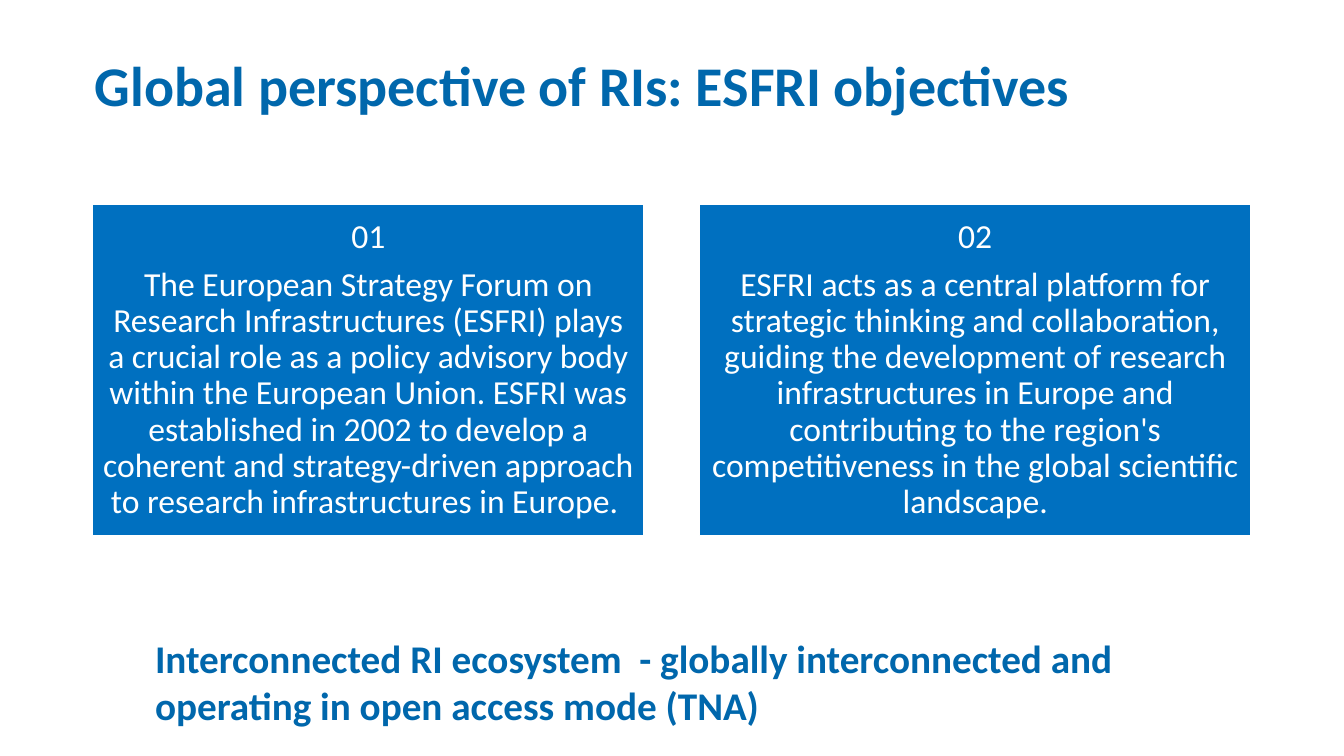
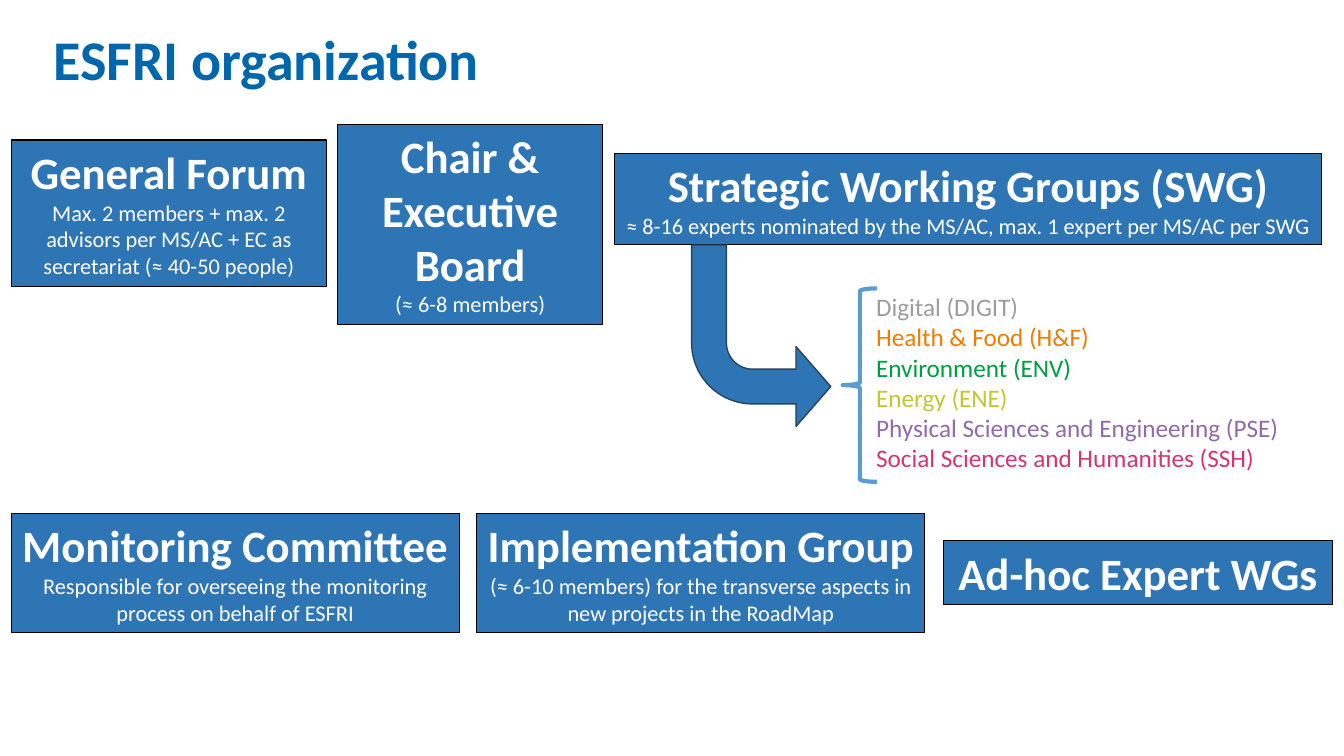
from lxml import etree
from pptx import Presentation
from pptx.dml.color import RGBColor
from pptx.enum.shapes import MSO_SHAPE
from pptx.enum.text import MSO_ANCHOR, MSO_AUTO_SIZE, PP_ALIGN
from pptx.oxml.ns import qn
from pptx.util import Pt

RECT, BRACE, ARROW = MSO_SHAPE.RECTANGLE, MSO_SHAPE.LEFT_BRACE, MSO_SHAPE.BENT_ARROW
TOP, MIDDLE = MSO_ANCHOR.TOP, MSO_ANCHOR.MIDDLE
LEFT, CENTER = PP_ALIGN.LEFT, PP_ALIGN.CENTER
FIXED = MSO_AUTO_SIZE.NONE
LIST_LAYOUT, TITLE_LAYOUT = 1, 5

FONT = "Calibri"
COLORS = {
    "title": "0067AC", "card": "0070C0", "unit": "2E75B6", "white": "FFFFFF",
    "black": "000000", "brace": "5B9BD5", "edge": "28445D",
    "digit": "9D9D9D", "food": "EF7D00", "env": "009E3F",
    "energy": "C4C52F", "physics": "9269AB", "social": "D73474",
}

CARDS = [
    ("01", "The European Strategy Forum on Research Infrastructures (ESFRI) plays "
           "a crucial role as a policy advisory body within the European Union. "
           "ESFRI was established in 2002 to develop a coherent and strategy-driven "
           "approach to research infrastructures in Europe. "),
    ("02", "ESFRI acts as a central platform for strategic thinking and "
           "collaboration, guiding the development of research infrastructures in "
           "Europe and contributing to the region's competitiveness in the global "
           "scientific landscape."),
]
UNITS = [
    ((8, 100, 225.4, 104.5), "General Forum",
     "Max. 2 members + max. 2 advisors per MS/AC + EC as secretariat (≈ 40-50 people)"),
    ((241.2, 88.6, 189.4, 143.3), "Chair & Executive Board", "(≈ 6-8 members)"),
    ((439.2, 109.4, 504.7, 65.6), "Strategic Working Groups (SWG)",
     "≈ 8-16 experts nominated by the MS/AC, max. 1 expert per MS/AC per SWG"),
    ((8, 366.5, 320, 85), "Monitoring Committee",
     "Responsible for overseeing the monitoring process on behalf of ESFRI"),
    ((340.6, 366.5, 320, 85), "Implementation Group",
     "(≈ 6-10 members) for the transverse aspects in new projects in the RoadMap"),
    ((673.9, 386, 278, 46), "Ad-hoc Expert WGs", None),
]
GROUPS = [
    ("Digital (DIGIT)", "digit"),
    ("Health & Food (H&F)", "food"),
    ("Environment (ENV)", "env"),
    ("Energy (ENE)", "energy"),
    ("Physical Sciences and Engineering (PSE)", "physics"),
    ("Social Sciences and Humanities (SSH)", "social"),
]


def color(name):
    return RGBColor.from_string(COLORS[name])


def place(shape, box):
    shape.left, shape.top, shape.width, shape.height = map(Pt, box)


def frame(shape, anchor=TOP, wrap=True):
    text = shape.text_frame
    text.auto_size = FIXED
    text.word_wrap = wrap
    text.vertical_anchor = anchor
    return text


def write(text, lines, align=LEFT, spacing=1.0, after=0):
    """Add one paragraph for each (words, size, color, bold) line."""
    for i, (words, size, tint, bold) in enumerate(lines):
        para = text.add_paragraph() if i else text.paragraphs[0]
        para.alignment = align
        para.line_spacing = spacing
        para.space_before, para.space_after = Pt(0), Pt(after)
        run = para.add_run()
        run.text = words
        run.font.name, run.font.size, run.font.bold = FONT, Pt(size), bold
        run.font.color.rgb = color(tint)


def draw(slide, kind, box, fill, line, weight):
    shape = slide.shapes.add_shape(kind, *map(Pt, box))
    shape.shadow.inherit = False
    if fill:
        shape.fill.solid()
        shape.fill.fore_color.rgb = color(fill)
    else:
        shape.fill.background()
    shape.line.color.rgb = color(line)
    shape.line.width = Pt(weight)
    return shape


def head(slide, box, words, anchor=MIDDLE, wrap=True):
    title = slide.shapes.title
    place(title, box)
    write(frame(title, anchor, wrap), [(words, 40, "title", True)], spacing=0.9)


def cards(slide, box, gap):
    """Fill the box with equal numbered cards side by side."""
    left, top, width, height = box
    wide = (width - gap * (len(CARDS) - 1)) / len(CARDS)
    for i, (number, words) in enumerate(CARDS):
        card = draw(slide, RECT, (left + i * (wide + gap), top, wide, height),
                    "card", "white", 1)
        text = frame(card, MIDDLE)
        text.margin_left = text.margin_right = Pt(7.2)
        text.margin_top = text.margin_bottom = Pt(7.2)
        write(text, [(part, 24, "white", False) for part in (number, words)],
              CENTER, 0.9, 8.4)


def closing(slide, box, words):
    note = slide.shapes.add_textbox(*map(Pt, box))
    write(frame(note), [(words, 28, "title", True)])


def unit(slide, box, name, detail):
    shape = draw(slide, RECT, box, "unit", "black", 0.75)
    lines = [(name, 32, "white", True)]
    if detail:
        lines.append((detail, 16, "white", False))
    write(frame(shape), lines, CENTER)


def groups(slide, box):
    """List the working groups to the right of a brace."""
    left, top, width, height = box
    body = slide.placeholders[1]
    place(body, (left + 16.6, top - 1.4, width - 16.6, height))
    text = frame(body)
    write(text, [(words, 18, tint, False) for words, tint in GROUPS])
    for para in text.paragraphs:
        props = para._p.get_or_add_pPr()
        props.set("marL", "0")
        props.set("indent", "0")
        etree.SubElement(props, qn("a:buNone"))
    draw(slide, BRACE, (left, top, 24.5, height), None, "brace", 3)


def arrow(slide, box):
    shape = draw(slide, ARROW, box, "unit", "edge", 1)
    for i, value in enumerate((0.25, 0.287, 0.25, 0.438)):
        shape.adjustments[i] = value
    shape.rotation = 180
    shape._element.spPr.find(qn("a:xfrm")).set("flipH", "1")


def goals(deck):
    slide = deck.slides.add_slide(deck.slide_layouts[TITLE_LAYOUT])
    head(slide, (60.5, 10.8, 833.8, 104.4),
         "Global perspective of RIs: ESFRI objectives")
    cards(slide, (66.2, 146.2, 827.4, 236.2), 39.6)
    closing(slide, (103.7, 449.3, 801.4, 75),
            "Interconnected RI ecosystem  - globally interconnected and "
            "operating in open access mode (TNA)")


def chart(deck):
    slide = deck.slides.add_slide(deck.slide_layouts[LIST_LAYOUT])
    head(slide, (31, 16.6, 322.6, 55.4), "ESFRI organization", wrap=False)
    for box, name, detail in UNITS:
        unit(slide, box, name, detail)
    groups(slide, (602, 206, 324, 138.2))
    arrow(slide, (494, 175, 99.4, 129.6))


def main():
    deck = Presentation()
    deck.slide_width, deck.slide_height = Pt(960), Pt(540)
    goals(deck)
    chart(deck)
    deck.save("out.pptx")


if __name__ == "__main__":
    main()
